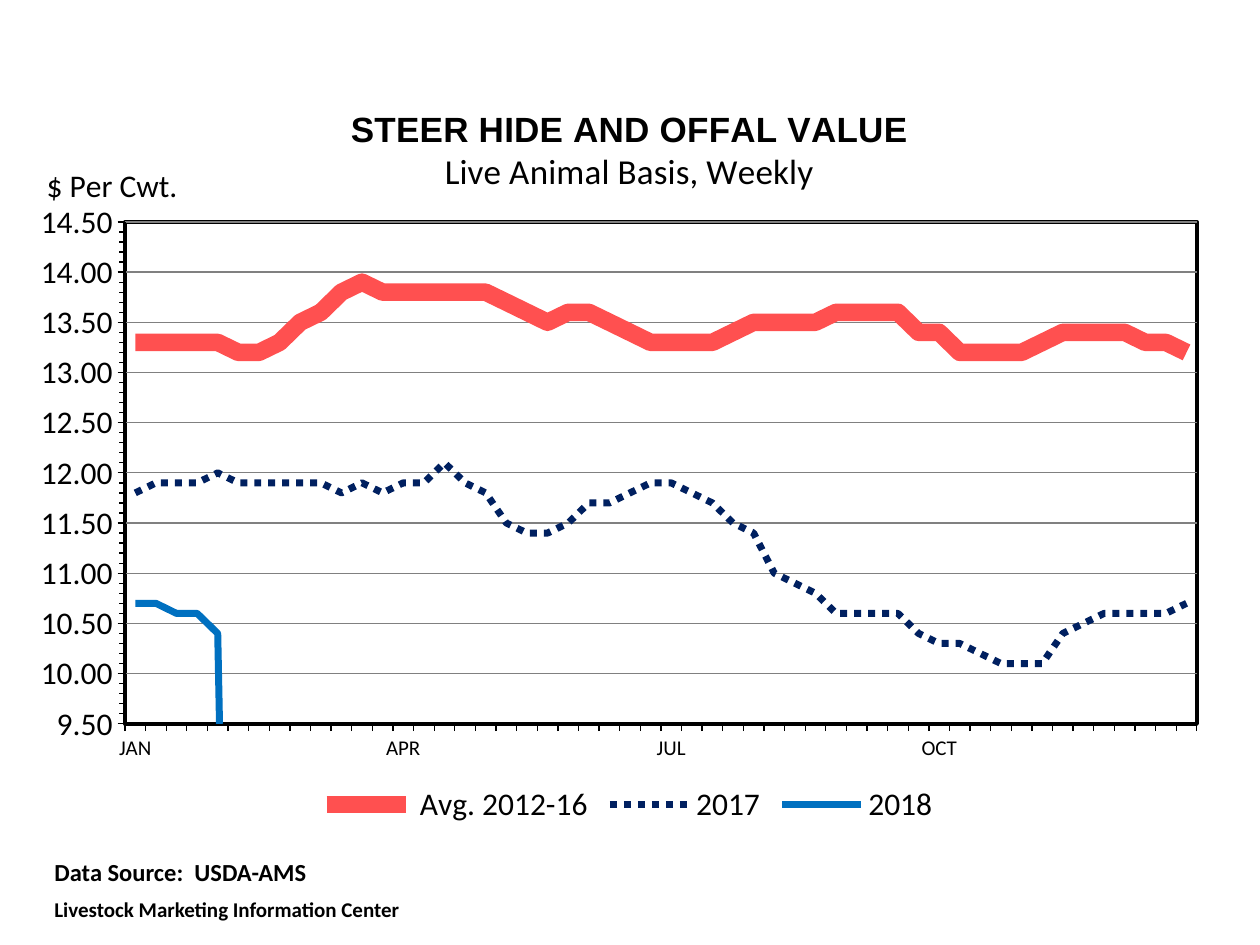
from pptx import Presentation
from pptx.chart.data import CategoryChartData
from pptx.dml.color import RGBColor
from pptx.enum.chart import XL_CHART_TYPE, XL_LEGEND_POSITION, XL_MARKER_STYLE, XL_TICK_LABEL_POSITION, XL_TICK_MARK
from pptx.enum.dml import MSO_LINE
from pptx.oxml import parse_xml
from pptx.oxml.ns import nsdecls
from pptx.util import Pt

PX_PER_INCH = 126
EMU_PER_PX = 914400 / PX_PER_INCH
CHART_WIDTH, CHART_HEIGHT = 1218, 746

BLACK = RGBColor(0x00, 0x00, 0x00)
WHITE = RGBColor(0xFF, 0xFF, 0xFF)
GRID_GRAY = RGBColor(0x80, 0x80, 0x80)
RED = RGBColor(0xFF, 0x50, 0x50)
NAVY = RGBColor(0x00, 0x20, 0x60)
BLUE = RGBColor(0x00, 0x70, 0xC0)

WEEKS = 52
QUARTERS = ["JAN", "APR", "JUL", "OCT"]
WEEKS_PER_QUARTER = WEEKS // len(QUARTERS)

AVERAGE = [
    13.3, 13.3, 13.3, 13.3, 13.3, 13.2, 13.2, 13.3, 13.5, 13.6, 13.8, 13.9, 13.8,
    13.8, 13.8, 13.8, 13.8, 13.8, 13.7, 13.6, 13.5, 13.6, 13.6, 13.5, 13.4, 13.3,
    13.3, 13.3, 13.3, 13.4, 13.5, 13.5, 13.5, 13.5, 13.6, 13.6, 13.6, 13.6, 13.4,
    13.4, 13.2, 13.2, 13.2, 13.2, 13.3, 13.4, 13.4, 13.4, 13.4, 13.3, 13.3, 13.2]
YEAR_2017 = [
    11.8, 11.9, 11.9, 11.9, 12.0, 11.9, 11.9, 11.9, 11.9, 11.9, 11.8, 11.9, 11.8,
    11.9, 11.9, 12.1, 11.9, 11.8, 11.5, 11.4, 11.4, 11.5, 11.7, 11.7, 11.8, 11.9,
    11.9, 11.8, 11.7, 11.5, 11.4, 11.0, 10.9, 10.8, 10.6, 10.6, 10.6, 10.6, 10.4,
    10.3, 10.3, 10.2, 10.1, 10.1, 10.1, 10.4, 10.5, 10.6, 10.6, 10.6, 10.6, 10.7]
YEAR_2018 = [10.7, 10.7, 10.6, 10.6, 10.4]

# Name, values, colour, width in points, dash
SERIES = [
    (" Avg. 2012-16", AVERAGE, RED, 10, None),
    ("2017", YEAR_2017, NAVY, 4, MSO_LINE.ROUND_DOT),
    ("2018", YEAR_2018, BLUE, 4, None),
]


def px(length):
    return round(length * EMU_PER_PX)


def set_values(target, values):
    for name, value in values.items():
        setattr(target, name, value)


class SlideBuilder:
    font_name = "Calibri"

    def __init__(self, slide):
        self.slide = slide

    def format_font(self, font, size, bold=False, name=None):
        set_values(font, {"name": name or self.font_name, "size": Pt(size), "bold": bold})
        font.color.rgb = BLACK

    def format_line(self, line, color, width, dash=None):
        line.color.rgb = color
        line.width = Pt(width)
        if dash:
            line.dash_style = dash

    def write_lines(self, text_frame, lines, space_before=0):
        """Each line is (text, size, bold, font name)."""
        for index, (text, size, bold, name) in enumerate(lines):
            paragraph = text_frame.add_paragraph() if index else text_frame.paragraphs[0]
            if index and space_before:
                paragraph.space_before = Pt(space_before)
            run = paragraph.add_run()
            run.text = text
            self.format_font(run.font, size, bold, name)

    def text_box(self, left, top, width, height, lines, space_before):
        box = self.slide.shapes.add_textbox(px(left), px(top), px(width), px(height))
        box.text_frame.word_wrap = True
        self.write_lines(box.text_frame, lines, space_before)

    def place(self, element, inner=False, **lengths):
        """Give a chart part a manual layout, in px from the chart's corner."""
        for layout in element.xpath("c:layout"):
            element.remove(layout)
        target = '<c:layoutTarget val="inner"/>' if inner else ""
        modes = "".join(f'<c:{key}Mode val="edge"/>' for key in "xy")
        sizes = "".join(
            f'<c:{key} val="{length / (CHART_WIDTH if key in "xw" else CHART_HEIGHT):.4f}"/>'
            for key, length in lengths.items())
        layout = parse_xml(f'<c:layout {nsdecls("c")}><c:manualLayout>{target}{modes}{sizes}'
                           "</c:manualLayout></c:layout>")
        overlay = element.xpath("c:overlay")
        if overlay:
            overlay[0].addprevious(layout)
        else:
            element.insert(0, layout)

    def line_chart(self, left, top, categories, series):
        data = CategoryChartData(number_format="#,##0.00")
        data.categories = categories
        for name, values, *_ in series:
            data.add_series(name, values + [None] * (len(categories) - len(values)))
        chart = self.slide.shapes.add_chart(
            XL_CHART_TYPE.LINE, px(left), px(top), px(CHART_WIDTH), px(CHART_HEIGHT), data).chart
        self.format_font(chart.font, 18)
        for plotted, (_, _, color, line_width, dash) in zip(chart.plots[0].series, series):
            plotted.smooth = False
            plotted.marker.style = XL_MARKER_STYLE.NONE
            self.format_line(plotted.format.line, color, line_width, dash)
        chart.plots[0].vary_by_categories = False
        # Weeks without a value drop to zero
        chart.element.xpath("c:chart/c:dispBlanksAs")[0].set("val", "zero")
        return chart

    def chart_title(self, title, parent, lines, x, y):
        self.write_lines(title.text_frame, lines)
        element = parent.xpath("c:title")[0]
        element.xpath("c:tx/c:rich/a:bodyPr")[0].set("rot", "0")
        self.place(element, x=x, y=y)

    def axis(self, axis, size, **values):
        set_values(axis, {"major_tick_mark": XL_TICK_MARK.OUTSIDE,
                          "tick_label_position": XL_TICK_LABEL_POSITION.LOW, **values})
        self.format_font(axis.tick_labels.font, size)
        self.format_line(axis.format.line, BLACK, 0.75)

    def legend(self, chart, size, **lengths):
        chart.has_legend = True
        set_values(chart.legend, {"position": XL_LEGEND_POSITION.BOTTOM, "include_in_layout": False})
        self.format_font(chart.legend.font, size)
        self.place(chart.element.xpath("c:chart/c:legend")[0], **lengths)

    def plot_area(self, chart, fill, border, border_width, **lengths):
        area = chart.element.xpath("c:chart/c:plotArea")[0]
        self.place(area, inner=True, **lengths)
        area.append(parse_xml(
            f'<c:spPr {nsdecls("c", "a")}><a:solidFill><a:srgbClr val="{fill}"/></a:solidFill>'
            f'<a:ln w="{Pt(border_width)}"><a:solidFill><a:srgbClr val="{border}"/></a:solidFill>'
            "</a:ln></c:spPr>"))


def main():
    presentation = Presentation()
    presentation.slide_width, presentation.slide_height = px(1260), px(945)
    builder = SlideBuilder(presentation.slides.add_slide(presentation.slide_layouts[6]))

    # Weekly chart, labelled at the start of each quarter
    categories = ["" if week % WEEKS_PER_QUARTER else QUARTERS[week // WEEKS_PER_QUARTER]
                  for week in range(WEEKS)]
    chart = builder.line_chart(21, 84, categories, SERIES)
    builder.plot_area(chart, WHITE, BLACK, 2.25, x=104, y=138, w=1072, h=502)

    # Axes and gridlines
    builder.axis(chart.category_axis, 12)
    value_axis = chart.value_axis
    builder.axis(value_axis, 18, minimum_scale=9.5, maximum_scale=14.5, major_unit=0.5,
                 minor_unit=0.1, minor_tick_mark=XL_TICK_MARK.OUTSIDE, has_major_gridlines=True)
    set_values(value_axis.tick_labels, {"number_format": "#,##0.00", "number_format_is_linked": False})
    builder.format_line(value_axis.major_gridlines.format.line, GRID_GRAY, 0.75)

    # Titles and legend
    builder.chart_title(chart.chart_title, chart.element.xpath("c:chart")[0],
                        [("STEER HIDE AND OFFAL VALUE", 20, True, "Arial"),
                         ("Live Animal Basis, Weekly", 20, False, None)], x=326, y=21)
    builder.chart_title(value_axis.axis_title, chart.element.xpath("c:chart/c:plotArea/c:valAx")[0],
                        [("$ Per Cwt.", 18, False, None)], x=20, y=74)
    builder.legend(chart, 18, x=294, y=695, w=629, h=52)

    # Source note
    builder.text_box(42, 851, 567, 81,
                     [("Data Source:  USDA-AMS", 14, True, None),
                      ("Livestock Marketing Information Center", 12, True, None)], space_before=5.5)

    presentation.save("out.pptx")


if __name__ == "__main__":
    main()
